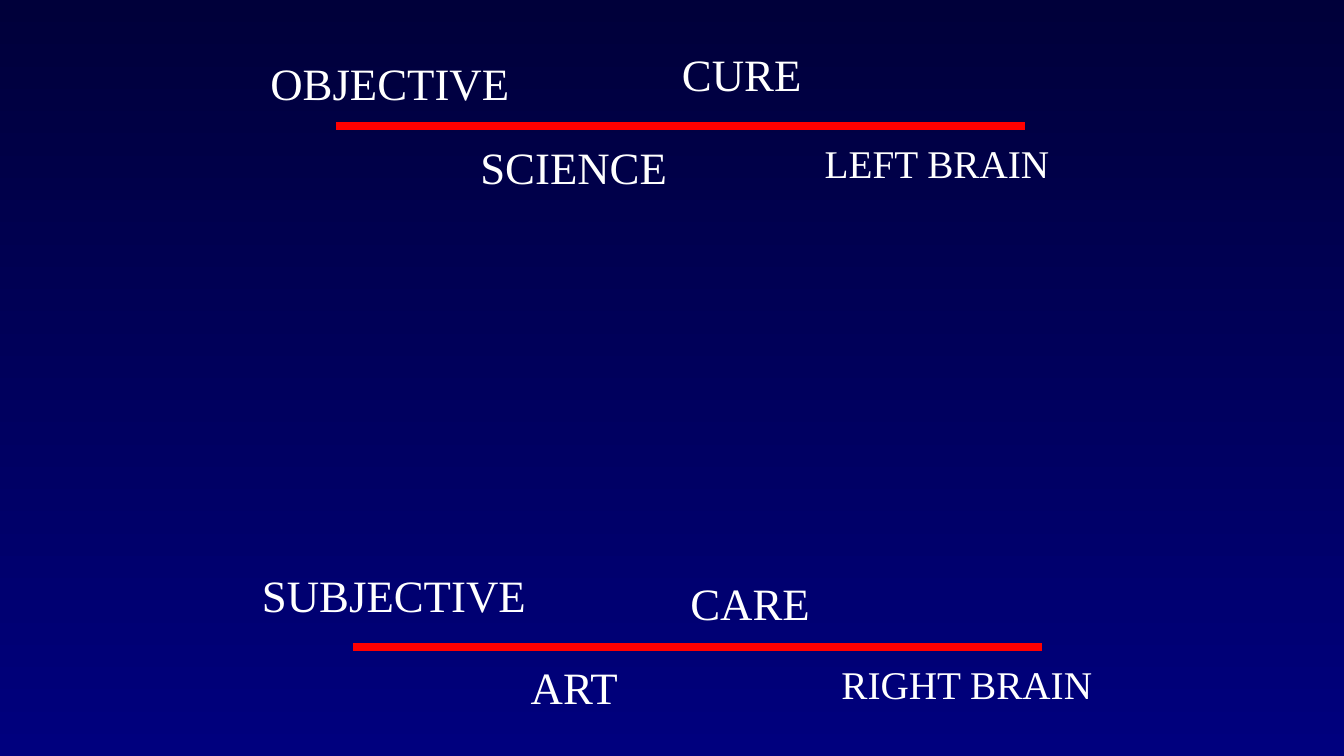
import pptx
import pptx.dml.color
import pptx.enum.shapes
import pptx.enum.text
import pptx.oxml.ns
import pptx.util
from lxml import etree


def color(value):
    return pptx.dml.color.RGBColor.from_string(value)


class BrainSlide:
    """Draws on one slide over a grid of 160 columns by 90 rows."""

    font = "Times New Roman"
    ink = "FFFFFF"
    accent = "FF0000"
    night = ("00003A", "00007E")

    def __init__(self, presentation):
        self.column = presentation.slide_width / 160
        self.row = presentation.slide_height / 90
        self.slide = presentation.slides.add_slide(presentation.slide_layouts[6])

    def x(self, columns):
        return round(columns * self.column)

    def y(self, rows):
        return round(rows * self.row)

    def background(self):
        fill = self.slide.background.fill
        fill.gradient()
        fill.gradient_angle = 270
        for stop, shade, position in zip(fill.gradient_stops, self.night, (0, 1)):
            stop.color.rgb = color(shade)
            stop.position = position

    def divider(self, left, right, row):
        connector = self.slide.shapes.add_connector(
            pptx.enum.shapes.MSO_CONNECTOR.STRAIGHT,
            self.x(left), self.y(row), self.x(right), self.y(row))
        connector.line.color.rgb = color(self.accent)
        connector.line.width = pptx.util.Pt(6)
        properties = connector._element.spPr
        etree.SubElement(properties, pptx.oxml.ns.qn("a:effectLst"))

    def label(self, text, left, top, width, size=32):
        height = 7.6 if size == 32 else 6.8
        shape = self.slide.shapes.add_textbox(
            self.x(left), self.y(top), self.x(width), self.y(height))
        frame = shape.text_frame
        frame.word_wrap = True
        frame.auto_size = pptx.enum.text.MSO_AUTO_SIZE.SHAPE_TO_FIT_TEXT
        run = frame.paragraphs[0].add_run()
        run.text = text
        run.font.name = self.font
        run.font.size = pptx.util.Pt(size)
        run.font.color.rgb = color(self.ink)


def main():
    presentation = pptx.Presentation()
    presentation.slide_width = pptx.util.Inches(13.33)
    presentation.slide_height = pptx.util.Inches(7.5)
    brain = BrainSlide(presentation)
    brain.background()
    brain.divider(40, 122, 15)
    brain.divider(42, 124, 77)
    brain.label("OBJECTIVE", 31, 6, 31.2)
    brain.label("SUBJECTIVE", 30, 67, 34.2)
    brain.label("SCIENCE", 56, 16, 25)
    brain.label("ART", 62, 78, 21.1)
    brain.label("CURE", 80, 5, 17)
    brain.label("CARE", 81, 68, 17)
    brain.label("LEFT BRAIN", 97, 16, 29.6, size=28)
    brain.label("RIGHT BRAIN", 99, 78, 32.7, size=28)
    presentation.save("out.pptx")


if __name__ == "__main__":
    main()
